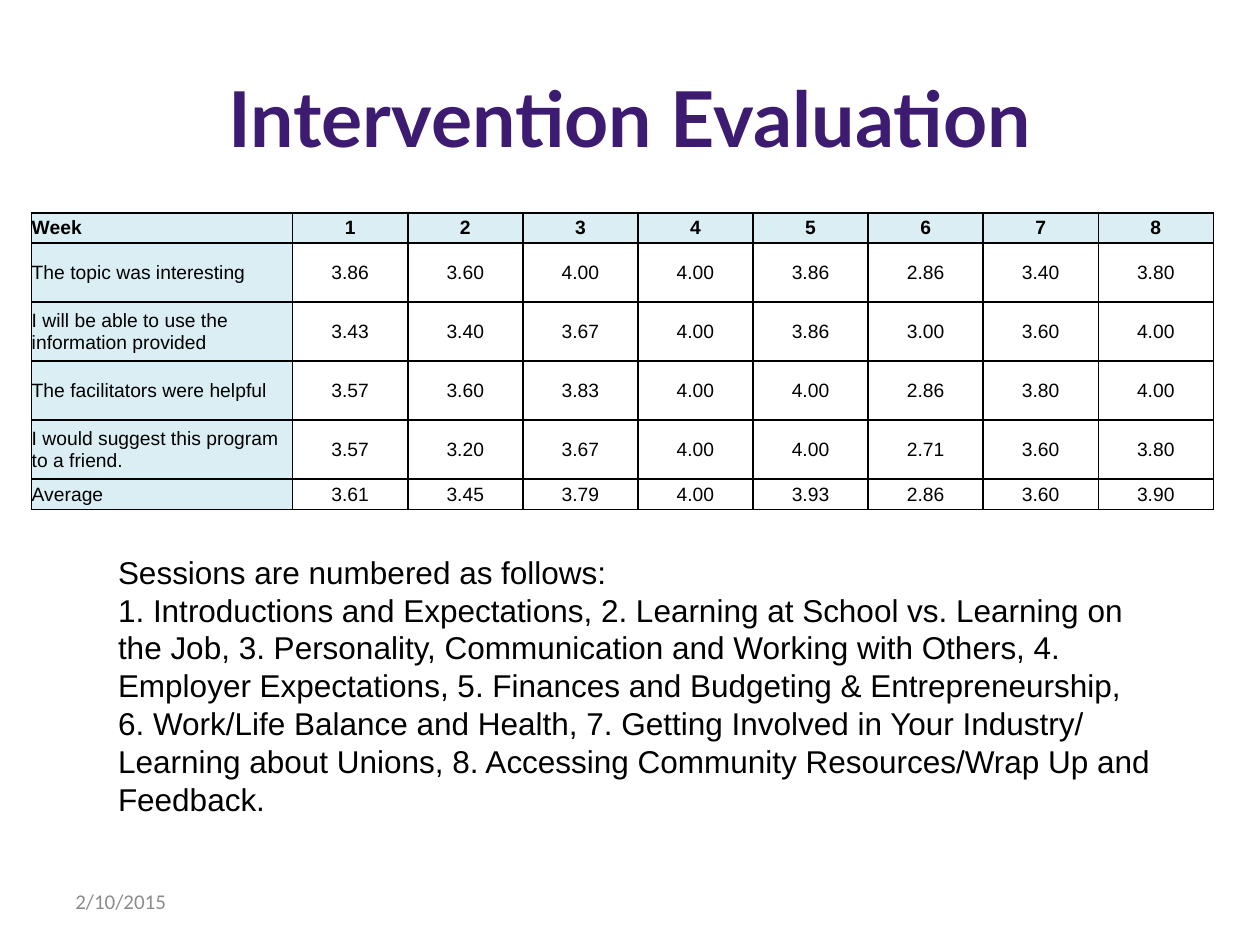
"""Build the Intervention Evaluation slide with its weekly ratings table."""
from dataclasses import dataclass

from lxml import etree
from pptx import Presentation
from pptx import util as u
from pptx.dml.color import RGBColor
from pptx.enum import text
from pptx.oxml import ns


@dataclass(frozen=True)
class Theme:
    title_color: str = "3C1B71"
    text_color: str = "000000"
    date_color: str = "8C8C8C"
    header_fill: str = "DAEEF3"
    border_color: str = "000000"
    title_size: int = 44
    body_size: int = 18
    date_size: int = 12
    table_size: int = 11


theme = Theme()


def write_text(frame, content, size, font="Arial", color=theme.text_color, bold=False,
               align=text.PP_ALIGN.LEFT, anchor=text.MSO_ANCHOR.MIDDLE, space_after=0):
    frame.word_wrap = True
    frame.vertical_anchor = anchor
    frame.text = content
    for paragraph in frame.paragraphs:
        paragraph.alignment = align
        paragraph.space_before = u.Pt(0)
        paragraph.space_after = u.Pt(space_after)
        for run in paragraph.runs:
            run.font.name = font
            run.font.size = u.Pt(size)
            run.font.bold = bold
            run.font.color.rgb = RGBColor.from_string(color)


def add_borders(cell, color):
    properties = cell._tc.get_or_add_tcPr()
    for side in ("a:lnL", "a:lnR", "a:lnT", "a:lnB"):
        line = etree.SubElement(properties, ns.qn(side), w=str(u.Pt(1)))
        fill = etree.SubElement(line, ns.qn("a:solidFill"))
        etree.SubElement(fill, ns.qn("a:srgbClr"), val=color)


presentation = Presentation()
presentation.slide_width = u.Cm(25.4)
presentation.slide_height = u.Cm(19.05)
slide = presentation.slides.add_slide(presentation.slide_layouts[5])

title = slide.shapes.title
title.left, title.top, title.width, title.height = u.Cm(1.27), u.Cm(0.76), u.Cm(22.86), u.Cm(3.18)
write_text(title.text_frame, "Intervention Evaluation", theme.title_size, font="Lato",
           color=theme.title_color, bold=True, align=text.PP_ALIGN.CENTER)

date_box = slide.shapes.add_textbox(u.Cm(1.27), u.Cm(17.65), u.Cm(5.93), u.Cm(1.02))
write_text(date_box.text_frame, "2/10/2015", theme.date_size, font="Calibri", color=theme.date_color)

ratings = [
    ("Week", "1", "2", "3", "4", "5", "6", "7", "8"),
    ("The topic was interesting",
     "3.86", "3.60", "4.00", "4.00", "3.86", "2.86", "3.40", "3.80"),
    ("I will be able to use the information provided",
     "3.43", "3.40", "3.67", "4.00", "3.86", "3.00", "3.60", "4.00"),
    ("The facilitators were helpful",
     "3.57", "3.60", "3.83", "4.00", "4.00", "2.86", "3.80", "4.00"),
    ("I would suggest this program to a friend.",
     "3.57", "3.20", "3.67", "4.00", "4.00", "2.71", "3.60", "3.80"),
    ("Average", "3.61", "3.45", "3.79", "4.00", "3.93", "2.86", "3.60", "3.90"),
]
column_widths = [5.26] + [2.32] * 8
row_heights = [0.61] + [1.19] * 4 + [0.61]
table = slide.shapes.add_table(len(ratings), len(column_widths), u.Cm(0.64), u.Cm(4.29),
                               u.Cm(sum(column_widths)), u.Cm(sum(row_heights))).table
for column, width in zip(table.columns, column_widths):
    column.width = u.Cm(width)
for row, height in zip(table.rows, row_heights):
    row.height = u.Cm(height)

for row_index, values in enumerate(ratings):
    for column_index, value in enumerate(values):
        cell = table.cell(row_index, column_index)
        cell.margin_left = cell.margin_right = cell.margin_top = cell.margin_bottom = 0
        cell.vertical_anchor = text.MSO_ANCHOR.MIDDLE
        write_text(cell.text_frame, value, theme.table_size, bold=row_index == 0, space_after=6,
                   align=text.PP_ALIGN.CENTER if column_index else text.PP_ALIGN.LEFT)
        add_borders(cell, theme.border_color)
        if row_index == 0 or column_index == 0:
            cell.fill.solid()
            cell.fill.fore_color.rgb = RGBColor.from_string(theme.header_fill)
        else:
            cell.fill.background()

sessions = (
    "Sessions are numbered as follows:\n"
    "1. Introductions and Expectations, 2. Learning at School vs. Learning on the Job, "
    "3. Personality, Communication and Working with Others, 4. Employer Expectations, "
    "5. Finances and Budgeting & Entrepreneurship, 6. Work/Life Balance and Health, "
    "7. Getting Involved in Your Industry/ Learning about Unions, "
    "8. Accessing Community Resources/Wrap Up and Feedback."
)
sessions_box = slide.shapes.add_textbox(u.Cm(2.13), u.Cm(11.02), u.Cm(21.34), u.Cm(6.4))
write_text(sessions_box.text_frame, sessions, theme.body_size, anchor=text.MSO_ANCHOR.TOP)
sessions_box.text_frame.auto_size = text.MSO_AUTO_SIZE.SHAPE_TO_FIT_TEXT

presentation.save("out.pptx")
